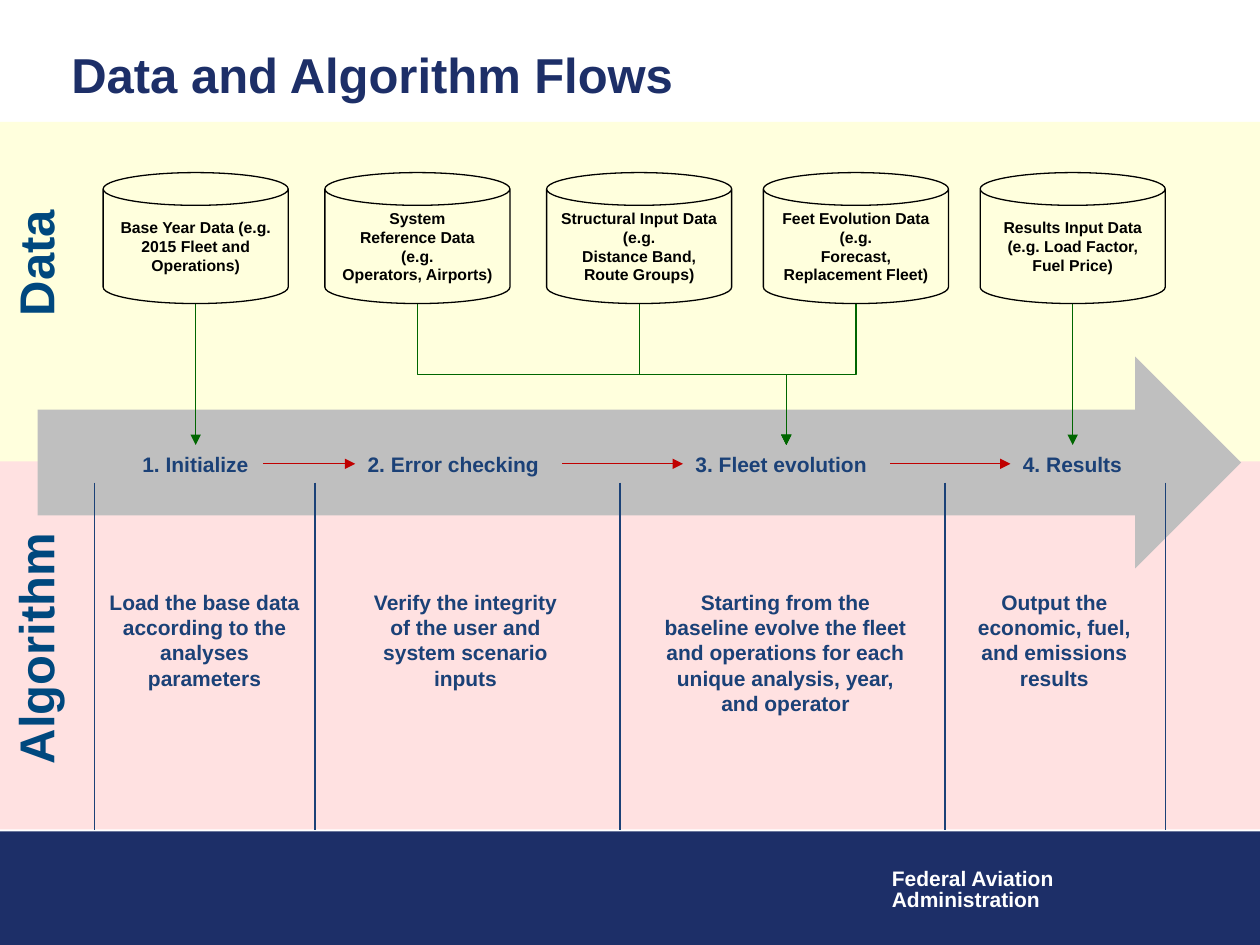
import pptx
import pptx.dml.color
import pptx.enum.dml
import pptx.enum.shapes
import pptx.enum.text
import pptx.oxml
import pptx.oxml.ns
import pptx.util

Cm = pptx.util.Cm
RGBColor = pptx.dml.color.RGBColor
SHAPE = pptx.enum.shapes.MSO_SHAPE
CONNECTOR = pptx.enum.shapes.MSO_CONNECTOR
ALIGN = pptx.enum.text.PP_ALIGN
ANCHOR = pptx.enum.text.MSO_ANCHOR

NAVY = RGBColor(0x1D, 0x2F, 0x68)
BLUE = RGBColor(0x1B, 0x41, 0x77)
LABEL_BLUE = RGBColor(0x00, 0x48, 0x7E)
YELLOW = RGBColor(0xFF, 0xFF, 0xDD)
PINK = RGBColor(0xFF, 0xE1, 0xE1)
GRAY = RGBColor(0xBF, 0xBF, 0xBF)
RED = RGBColor(0xC0, 0x00, 0x00)
GREEN = RGBColor(0x00, 0x66, 0x00)
BLACK = RGBColor(0x00, 0x00, 0x00)
WHITE = RGBColor(0xFF, 0xFF, 0xFF)

DATA_STORES = [
    (0, ["Base Year Data (e.g. 2015 Fleet and Operations)"]),
    (4.47, ["System", "Reference Data", "(e.g.", "Operators, Airports)"]),
    (8.94, ["Structural Input Data", "(e.g.", "Distance Band,", "Route Groups)"]),
    (13.31, ["Feet Evolution Data", "(e.g.", "Forecast,", "Replacement Fleet)"]),
    (17.68, ["Results Input Data", "(e.g. Load Factor,", "Fuel Price)"]),
]
STEPS = [
    (1.86, 2.69, "1. Initialize"),
    (6.4, 4.17, "2. Error checking"),
    (13.01, 4.17, "3. Fleet evolution"),
    (19.61, 2.54, "4. Results"),
]
DESCRIPTIONS = [
    (0, 4.45, "Load the base data according to the analyses parameters"),
    (5.26, 4.45, "Verify the integrity of the user and system scenario inputs"),
    (11.18, 5.51, "Starting from the baseline evolve the fleet and operations "
                  "for each unique analysis, year, and operator"),
    (17.35, 4.01, "Output the economic, fuel, and emissions results"),
]
DIVIDERS = [0, 4.45, 10.6, 17.15, 21.6]


def write_lines(paragraph, lines, size, color):
    for index, line in enumerate(lines):
        if index:
            paragraph.add_line_break()
        run = paragraph.add_run()
        run.text = line
        run.font.name = "Arial"
        run.font.size = pptx.util.Pt(size)
        run.font.bold = True
        run.font.color.rgb = color


def add_text(slide, box, text, size, color, align=ALIGN.LEFT, wrap=True):
    shape = slide.shapes.add_textbox(*map(Cm, box))
    shape.text_frame.word_wrap = wrap
    paragraph = shape.text_frame.paragraphs[0]
    paragraph.alignment = align
    write_lines(paragraph, [text], size, color)
    return shape


def add_block(slide, kind, box, fill):
    shape = slide.shapes.add_shape(kind, *map(Cm, box))
    shape.shadow.inherit = False
    shape.fill.solid()
    shape.fill.fore_color.rgb = fill
    shape.line.fill.background()
    return shape


def add_line(slide, start, end, color, arrow=True, kind=CONNECTOR.STRAIGHT):
    connector = slide.shapes.add_connector(kind, *map(Cm, (*start, *end)))
    connector.line.color.rgb = color
    connector.line.width = pptx.util.Pt(0.75)
    if arrow:
        line = connector.line._get_or_add_ln()
        tail = pptx.oxml.parse_xml(
            f'<a:tailEnd {pptx.oxml.ns.nsdecls("a")} type="triangle"/>')
        line.append(tail)
    effects = pptx.oxml.parse_xml(f'<a:effectLst {pptx.oxml.ns.nsdecls("a")}/>')
    connector._element.spPr.append(effects)
    return connector


def add_elbow_drop(slide, start, end, color):
    center_x = (start[0] + end[0]) / 2
    center_y = (start[1] + end[1]) / 2
    half_length = (end[1] - start[1]) / 2
    half_span = abs(end[0] - start[0]) / 2
    direction = 1 if end[0] < start[0] else -1
    connector = add_line(
        slide,
        (center_x - direction * half_length, center_y - half_span),
        (center_x + direction * half_length, center_y + half_span),
        color, kind=CONNECTOR.ELBOW)
    transform = connector._element.spPr.find(pptx.oxml.ns.qn("a:xfrm"))
    transform.set("rot", str((90 if direction == 1 else 270) * 60000))


def add_band(slide, box, color, label, label_center, label_width):
    add_block(slide, SHAPE.RECTANGLE, box, color)
    height = 1.45
    label_box = (box[0] + 0.71 - label_width / 2,
                 box[1] + label_center - height / 2, label_width, height)
    shape = add_text(slide, label_box, label, 28, LABEL_BLUE)
    shape.rotation = 270


def add_title(slide, box):
    shape = add_text(slide, box, "Data and Algorithm Flows", 28, NAVY)
    shape.text_frame.vertical_anchor = ANCHOR.MIDDLE


def add_footer(slide, box):
    left, top, width, height = box
    add_block(slide, SHAPE.RECTANGLE, box, NAVY)
    shape = add_text(slide, (left + 17.73, top + 0.64, 3.81, 1.12),
                     "Federal Aviation", 12, WHITE, wrap=False)
    write_lines(shape.text_frame.add_paragraph(), ["Administration"], 12, WHITE)
    for paragraph in shape.text_frame.paragraphs:
        paragraph.line_spacing = 0.85


def add_process(slide, box):
    left, top, width, height = box
    add_block(slide, SHAPE.RIGHT_ARROW, box, GRAY)
    previous_end = None
    for offset, step_width, name in STEPS:
        step_left = left + offset
        add_text(slide, (step_left, top + 1.78, step_width, 0.76),
                 name, 12, BLUE, wrap=False)
        if previous_end is not None:
            add_line(slide, (previous_end, top + 2.16), (step_left, top + 2.16), RED)
        previous_end = step_left + step_width


def add_descriptions(slide, box):
    left, top, width, height = box
    for offset in DIVIDERS:
        add_line(slide, (left + offset, top), (left + offset, top + height),
                 BLUE, arrow=False)
    for offset, text_width, text in DESCRIPTIONS:
        add_text(slide, (left + offset, top + 2.03, text_width, 2.31),
                 text, 12, BLUE, ALIGN.CENTER)


def add_data_stores(slide, box):
    left, top, width, height = box
    can_width, can_height = 3.73, 2.64
    bottom = top + can_height
    centers = [left + offset + can_width / 2 for offset, lines in DATA_STORES]
    for center in centers[1:4]:
        add_elbow_drop(slide, (center, bottom), (left + 13.77, top + height), GREEN)
    for center in (centers[0], centers[4]):
        add_line(slide, (center, bottom), (center, top + height), GREEN)
    for offset, lines in DATA_STORES:
        can = add_block(slide, SHAPE.CAN,
                        (left + offset, top, can_width, can_height), YELLOW)
        can.fill.background()
        can.line.color.rgb = BLACK
        can.line.width = pptx.util.Pt(0.75)
        can.text_frame.word_wrap = True
        can.text_frame.vertical_anchor = ANCHOR.MIDDLE
        paragraph = can.text_frame.paragraphs[0]
        paragraph.alignment = ALIGN.CENTER
        write_lines(paragraph, lines, 9, BLACK)


def main():
    presentation = pptx.Presentation()
    presentation.slide_width = Cm(25.4)
    presentation.slide_height = Cm(19.05)
    slide = presentation.slides.add_slide(presentation.slide_layouts[6])
    add_footer(slide, (0, 16.76, 25.4, 2.29))
    add_band(slide, (0, 2.46, 25.4, 6.86), YELLOW, "Data", 2.61, 3.1)
    add_band(slide, (0, 9.3, 25.4, 7.42), PINK, "Algorithm", 3.69, 5.33)
    add_title(slide, (1.19, 0.64, 23.55, 1.7))
    add_process(slide, (0.76, 7.19, 24.26, 4.27))
    add_descriptions(slide, (1.9, 9.73, 21.6, 7))
    add_data_stores(slide, (2.08, 3.48, 21.41, 5.49))
    presentation.save("out.pptx")


if __name__ == "__main__":
    main()
